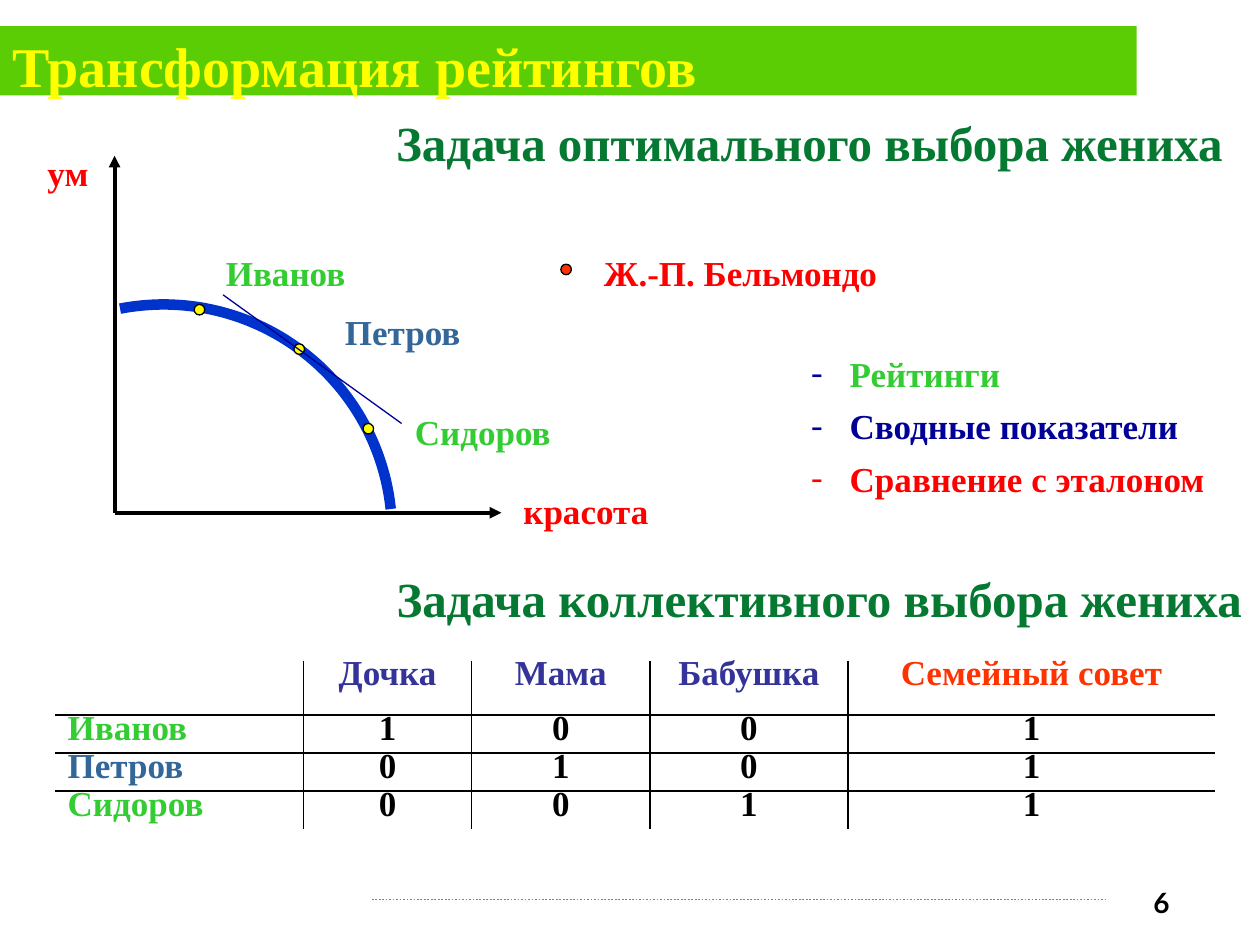
import math

import pptx
import pptx.util
from lxml import etree
from pptx.dml.color import RGBColor
from pptx.enum.dml import MSO_LINE
from pptx.enum.shapes import MSO_CONNECTOR, MSO_SHAPE
from pptx.enum.text import MSO_ANCHOR, PP_ALIGN
from pptx.oxml.ns import qn

Pt = pptx.util.Pt
SERIF = "Times New Roman"
GREEN, STEEL, RED, NAVY, BLACK = "33CC33", "336699", "FF0000", "000099", "000000"
INDIGO, FOREST = "333399", "057931"

TITLE = "Трансформация рейтингов"
HEADINGS = [  # text, left, top, width
    ("Задача оптимального выбора жениха", 206, 60.5, 513),
    ("Задача коллективного выбора жениха", 216.5, 321.5, 503),
]
LABELS = [  # text, colour, left, top, width
    ("ум", RED, 20, 83, 51),
    ("красота", RED, 292, 276, 108),
    ("Петров", STEEL, 190, 174, 108),
    ("Сидоров", GREEN, 230, 231, 108),
    ("Иванов", GREEN, 122, 140, 108),
    ("Ж.-П. Бельмондо", RED, 338, 140, 181),
]
METHODS = [  # text, text colour, dash colour
    ("Рейтинги", GREEN, NAVY),
    ("Сводные показатели", NAVY, NAVY),
    ("Сравнение с эталоном", RED, RED),
]
GROOMS = [(111, 174), (168, 196.5), (207.5, 242)]  # dots on the frontier
IDEAL = (320.5, 151)
DOT = 6
ORIGIN = (65.5, 293)
AXIS_ENDS = [(65.5, 89), (286.5, 293)]
FRONTIER = {"centre": (93.5, 304.5), "radius": 130.5, "start": 259, "end": 354}

VOTERS = [("Дочка", INDIGO), ("Мама", INDIGO), ("Бабушка", INDIGO),
          ("Семейный совет", "FF3300")]
VOTES = [
    ("Иванов", GREEN, "1001"),
    ("Петров", STEEL, "0101"),
    ("Сидоров", GREEN, "0011"),
]
COLUMNS = [142, 96, 102, 113, 210]
ROWS = [31, 21.7, 21.7, 21.7]


def rgb(value):
    return RGBColor.from_string(value)


def add_span(para, text, colour, size=20, font=SERIF):
    span = para.add_run()
    span.text = text
    span.font.name = font
    span.font.size = Pt(size)
    span.font.bold = True
    span.font.color.rgb = rgb(colour)


def add_box(slide, left, top, width, height):
    box = slide.shapes.add_textbox(Pt(left), Pt(top), Pt(width), Pt(height))
    box.text_frame.word_wrap = True
    return box.text_frame


def add_line(slide, start, end, colour, width, arrow=False):
    line = slide.shapes.add_connector(
        MSO_CONNECTOR.STRAIGHT, *(Pt(value) for value in (*start, *end)))
    line.line.color.rgb = rgb(colour)
    line.line.width = Pt(width)
    if arrow:
        etree.SubElement(line.line._get_or_add_ln(), qn("a:tailEnd"), type="triangle")
    etree.SubElement(line.element.spPr, qn("a:effectLst"))
    return line


def add_solid(slide, kind, left, top, width, height, fill, outline=None):
    shape = slide.shapes.add_shape(kind, Pt(left), Pt(top), Pt(width), Pt(height))
    shape.shadow.inherit = False
    shape.fill.solid()
    shape.fill.fore_color.rgb = rgb(fill)
    if outline:
        shape.line.color.rgb = rgb(outline)
        shape.line.width = Pt(0.75)
    else:
        shape.line.fill.background()
    return shape


def add_title(slide):
    title = slide.shapes.title
    title.left, title.top, title.width, title.height = Pt(0), Pt(20), Pt(580), Pt(34)
    title.text_frame.vertical_anchor = MSO_ANCHOR.MIDDLE
    para = title.text_frame.paragraphs[0]
    para.alignment = PP_ALIGN.LEFT
    add_span(para, TITLE, "FFFF00", 32)
    bar = add_solid(slide, MSO_SHAPE.RECTANGLE, 0, 15, 649.5, 39.5, "5BCD05")
    title.element.addprevious(bar.element)


def add_frontier(slide):
    (x, y), radius = FRONTIER["centre"], FRONTIER["radius"]
    points = []
    for degree in range(FRONTIER["start"], FRONTIER["end"] + 1):
        angle = math.radians(degree)
        points.append((Pt(x + radius * math.cos(angle)), Pt(y + radius * math.sin(angle))))
    builder = slide.shapes.build_freeform(*points[0])
    builder.add_line_segments(points[1:], close=False)
    curve = builder.convert_to_shape()
    curve.shadow.inherit = False
    curve.fill.background()
    curve.line.color.rgb = rgb("0033CC")
    curve.line.width = Pt(6)


def add_methods(slide):
    frame = add_box(slide, 456.5, 202.5, 244, 91)
    for index, (text, colour, dash) in enumerate(METHODS):
        para = frame.paragraphs[0] if index == 0 else frame.add_paragraph()
        props = para._p.get_or_add_pPr()
        props.set("marL", str(Pt(22)))
        props.set("indent", str(-Pt(22)))
        bullet_colour = etree.SubElement(props, qn("a:buClr"))
        etree.SubElement(bullet_colour, qn("a:srgbClr"), val=dash)
        etree.SubElement(props, qn("a:buFont"), typeface=SERIF)
        etree.SubElement(props, qn("a:buChar"), char="-")
        para.line_spacing = 0.8
        if index:
            para.space_before = Pt(10.7)
        add_span(para, text, colour)


def set_border(cell, side, visible):
    border = etree.SubElement(cell._tc.get_or_add_tcPr(), qn("a:" + side), w=str(Pt(1)))
    if visible:
        fill = etree.SubElement(border, qn("a:solidFill"))
        etree.SubElement(fill, qn("a:srgbClr"), val=BLACK)
    else:
        etree.SubElement(border, qn("a:noFill"))


def add_votes(slide):
    grid = [[("", BLACK), *VOTERS]]
    grid += [[(name, colour), *((vote, BLACK) for vote in votes)]
             for name, colour, votes in VOTES]
    table = slide.shapes.add_table(
        len(ROWS), len(COLUMNS), Pt(31.5), Pt(377.7),
        Pt(sum(COLUMNS)), Pt(sum(ROWS))).table
    table.first_row = table.horz_banding = False
    for column, width in zip(table.columns, COLUMNS):
        column.width = Pt(width)
    for r, (row, height) in enumerate(zip(grid, ROWS)):
        table.rows[r].height = Pt(height)
        for c, (text, colour) in enumerate(row):
            cell = table.cell(r, c)
            para = cell.text_frame.paragraphs[0]
            para.line_spacing = 0.6
            para.alignment = PP_ALIGN.CENTER if c else PP_ALIGN.LEFT
            if text:
                add_span(para, text, colour)
            inner = {"lnL": c > 0, "lnR": c < len(COLUMNS) - 1,
                     "lnT": r > 0, "lnB": r < len(ROWS) - 1}
            for side, visible in inner.items():
                set_border(cell, side, visible)
            cell.fill.background()


def main():
    deck = pptx.Presentation()
    deck.slide_width, deck.slide_height = Pt(720), Pt(540)
    slide = deck.slides.add_slide(deck.slide_layouts[5])
    add_title(slide)

    for end in AXIS_ENDS:
        add_line(slide, ORIGIN, end, BLACK, 2.25, arrow=True)
    add_frontier(slide)
    add_methods(slide)
    for x, y in GROOMS:
        add_solid(slide, MSO_SHAPE.OVAL, x, y, DOT, DOT, "FFFF00", BLACK)
    for text, colour, left, top, width in LABELS:
        add_span(add_box(slide, left, top, width, 31.5).paragraphs[0], text, colour)
    add_line(slide, (127.5, 168.5), (229.5, 242), NAVY, 0.75)
    add_solid(slide, MSO_SHAPE.FLOWCHART_CONNECTOR, *IDEAL, DOT, DOT, "FF3300", BLACK)

    for text, left, top, width in HEADINGS:
        para = add_box(slide, left, top, width, 41).paragraphs[0]
        para.alignment = PP_ALIGN.CENTER
        add_span(para, text, FOREST, 28)
    add_votes(slide)

    footer = add_line(slide, (212.5, 514), (632, 514), "808080", 1)
    footer.line.dash_style = MSO_LINE.ROUND_DOT
    number = add_box(slide, 620.5, 502.5, 55, 20).paragraphs[0]
    number.alignment = PP_ALIGN.RIGHT
    add_span(number, "6", BLACK, 16, "Lato")
    deck.save("out.pptx")


if __name__ == "__main__":
    main()
